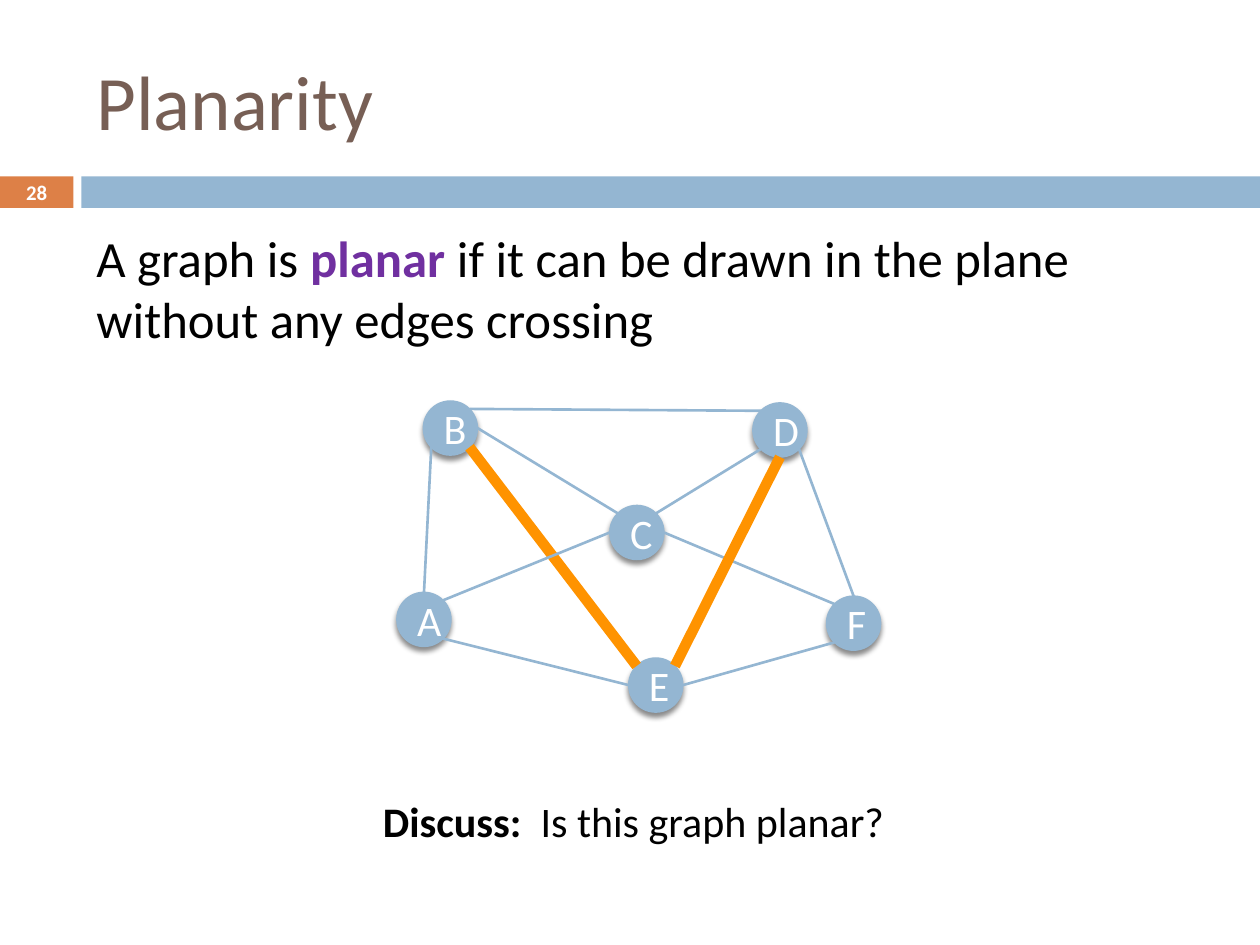
from dataclasses import dataclass
from math import cos, radians, sin
from typing import NamedTuple

from lxml.etree import SubElement
from pptx import Presentation
from pptx.dml.color import RGBColor as RGB
from pptx.enum.shapes import MSO_CONNECTOR as Connector, MSO_SHAPE as Preset
from pptx.enum.text import MSO_ANCHOR as Anchor, PP_ALIGN as Align
from pptx.oxml.ns import qn
from pptx.util import Inches, Pt


@dataclass(frozen=True)
class Theme:
    font: str = "Calibri"
    blue: RGB = RGB(0x94, 0xB6, 0xD2)
    badge: RGB = RGB(0xDD, 0x80, 0x47)
    heading: RGB = RGB(0x77, 0x5F, 0x55)
    term: RGB = RGB(0x70, 0x30, 0xA0)
    highlight: RGB = RGB(0xFF, 0x93, 0x00)
    black: RGB = RGB(0, 0, 0)
    white: RGB = RGB(0xFF, 0xFF, 0xFF)
    title_pt: float = 44
    body_pt: float = 29
    graph_pt: float = 24
    number_pt: float = 11.9
    edge_pt: float = 1.5
    highlight_pt: float = 6
    outline_pt: float = 0.79


class Box(NamedTuple):
    """Left, top, width and height in percent of the slide."""
    left: float
    top: float
    width: float
    height: float


class Piece(NamedTuple):
    text: str
    color: RGB
    bold: bool = False


class Node(NamedTuple):
    """Centre of a vertex in percent of the slide."""
    x: float
    y: float


class Edge(NamedTuple):
    """Two vertices, each with the compass side where the edge meets it."""
    start: str
    start_side: str
    end: str
    end_side: str
    highlighted: bool = False


THEME = Theme()
WIDTH, HEIGHT = Inches(10), Inches(7.5)
DIAMETER = Inches(0.43)
SIDES = {side: radians(45 * step) for step, side in
         enumerate(("E", "SE", "S", "SW", "W", "NW", "N", "NE"))}

NODES = {
    "A": Node(33.65, 65.55), "B": Node(35.75, 45.3), "C": Node(50.55, 56.35),
    "D": Node(61.9, 45.5), "E": Node(52.05, 72.5), "F": Node(67.75, 65.95),
}
EDGES = (
    Edge("B", "NE", "D", "NW"), Edge("B", "E", "C", "NW"),
    Edge("B", "SE", "E", "NW", True), Edge("A", "NE", "C", "W"),
    Edge("A", "N", "B", "SW"), Edge("A", "SE", "E", "W"),
    Edge("C", "E", "F", "NW"), Edge("D", "SE", "F", "N"),
    Edge("C", "NE", "D", "SW"), Edge("D", "S", "E", "NE", True),
    Edge("E", "E", "F", "SW"),
)


def across(percent: float) -> int:
    return round(WIDTH * percent / 100)


def down(percent: float) -> int:
    return round(HEIGHT * percent / 100)


def place(box: Box) -> tuple[int, int, int, int]:
    return across(box.left), down(box.top), across(box.width), down(box.height)


def add_band(slide, box: Box, color: RGB) -> None:
    band = slide.shapes.add_shape(Preset.RECTANGLE, *place(box))
    band.shadow.inherit = False
    band.fill.solid()
    band.fill.fore_color.rgb = color
    band.line.fill.background()


def add_text(slide, box: Box, size: float, *pieces: Piece, anchor=Anchor.TOP,
             align=Align.LEFT, before: float = 0, wrap: bool = True) -> None:
    frame = slide.shapes.add_textbox(*place(box)).text_frame
    frame.word_wrap = wrap
    frame.vertical_anchor = anchor
    paragraph = frame.paragraphs[0]
    paragraph.alignment = align
    paragraph.space_before = Pt(before)
    paragraph.font.name, paragraph.font.size = THEME.font, Pt(size)
    for piece in pieces:
        run = paragraph.add_run()
        run.text = piece.text
        run.font.bold = piece.bold
        run.font.color.rgb = piece.color


def add_node(graph, label: str, node: Node) -> None:
    vertex = graph.shapes.add_shape(
        Preset.OVAL, across(node.x) - DIAMETER // 2,
        down(node.y) - DIAMETER // 2, DIAMETER, DIAMETER)
    vertex.fill.solid()
    vertex.fill.fore_color.rgb = THEME.blue
    vertex.line.color.rgb = THEME.blue
    vertex.line.width = Pt(THEME.outline_pt)
    # Soft shadow straight below
    vertex.shadow.inherit = False
    effects = vertex._element.spPr.find(qn("a:effectLst"))
    shadow = SubElement(effects, qn("a:outerShdw"), blurRad=str(Pt(3)),
                        dist=str(Pt(2.4)), dir="5400000", rotWithShape="0")
    tint = SubElement(shadow, qn("a:srgbClr"), val=str(THEME.black))
    SubElement(tint, qn("a:alpha"), val="45000")

    vertex.text_frame.vertical_anchor = Anchor.MIDDLE
    paragraph = vertex.text_frame.paragraphs[0]
    paragraph.text = label
    paragraph.alignment = Align.CENTER
    paragraph.font.name, paragraph.font.size = THEME.font, Pt(THEME.graph_pt)
    paragraph.font.color.rgb = THEME.white


def rim(label: str, side: str) -> tuple[int, int]:
    node, angle = NODES[label], SIDES[side]
    return (round(across(node.x) + DIAMETER / 2 * cos(angle)),
            round(down(node.y) + DIAMETER / 2 * sin(angle)))


def add_edge(graph, edge: Edge) -> None:
    line = graph.shapes.add_connector(
        Connector.STRAIGHT, *rim(edge.start, edge.start_side),
        *rim(edge.end, edge.end_side))
    line.line.color.rgb = THEME.highlight if edge.highlighted else THEME.blue
    line.line.width = Pt(THEME.highlight_pt if edge.highlighted else THEME.edge_pt)
    SubElement(line._element.spPr, qn("a:effectLst"))


def main() -> None:
    deck = Presentation()
    deck.slide_width, deck.slide_height = WIDTH, HEIGHT
    slide = deck.slides.add_slide(deck.slide_layouts[6])

    # Divider with the slide number's badge
    add_band(slide, Box(0, 18.67, 5.83, 3.33), THEME.badge)
    add_band(slide, Box(6.46, 18.67, 93.54, 3.33), THEME.blue)

    # Title and definition
    add_text(slide, Box(6.67, 3.33, 89.2, 14.4), THEME.title_pt,
             Piece("Planarity", THEME.heading), anchor=Anchor.MIDDLE)
    add_text(slide, Box(6.67, 23.33, 89.2, 65.6), THEME.body_pt,
             Piece("A graph is ", THEME.black),
             Piece("planar", THEME.term, True),
             Piece(" if it can be drawn in the plane without any edges crossing",
                   THEME.black), before=7)

    # Graph: vertices, then edges over them
    graph = slide.shapes.add_group_shape()
    for label, node in NODES.items():
        add_node(graph, label, node)
    for edge in EDGES:
        add_edge(graph, edge)

    # Slide number and question
    add_text(slide, Box(0, 18.53, 5.83, 3.6), THEME.number_pt,
             Piece("28", THEME.white, True),
             anchor=Anchor.MIDDLE, align=Align.CENTER)
    add_text(slide, Box(29.4, 83.47, 42.4, 6.67), THEME.graph_pt,
             Piece("Discuss:  ", THEME.black, True),
             Piece("Is this graph planar?", THEME.black), wrap=False)

    deck.save("out.pptx")


if __name__ == "__main__":
    main()
